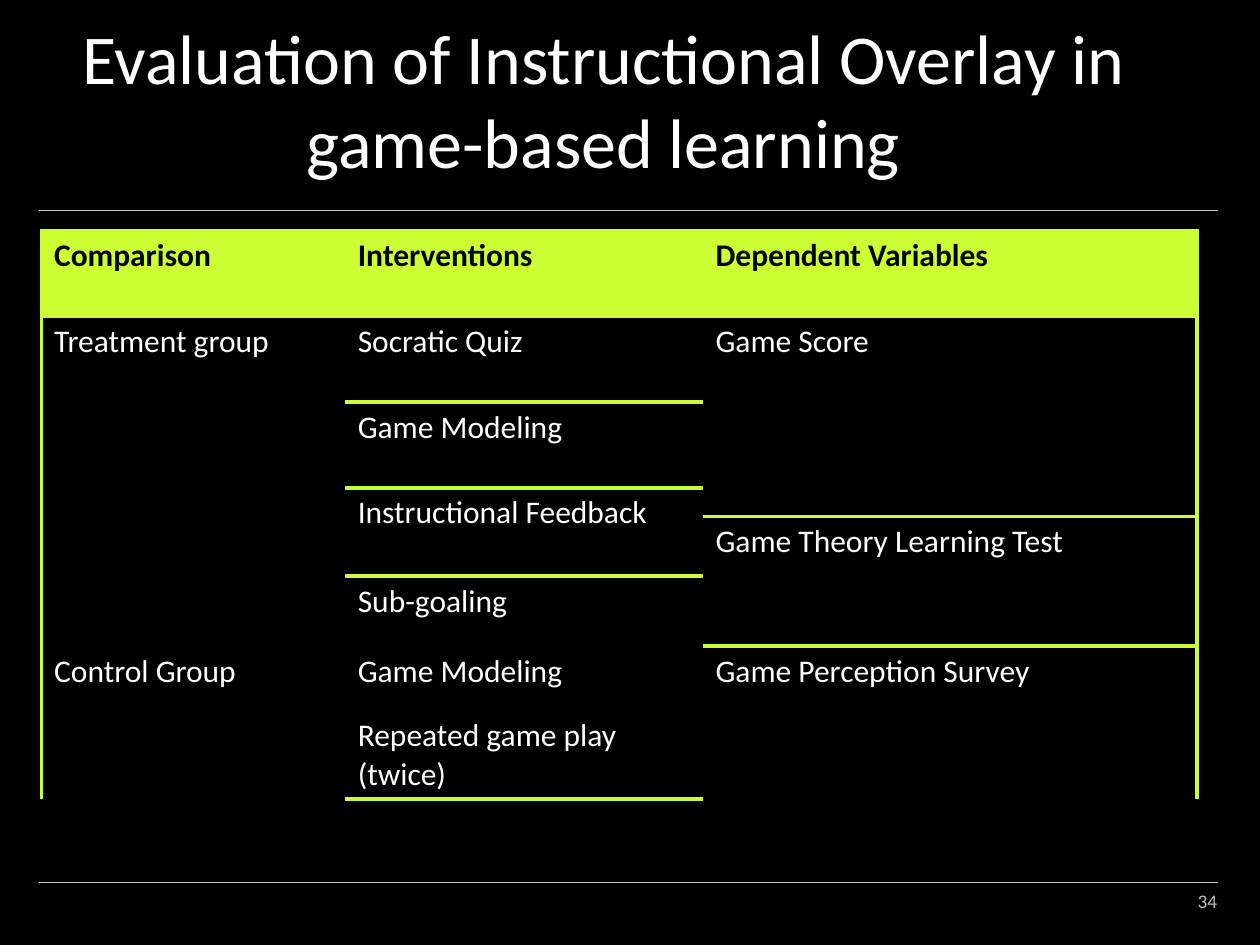
import pptx
import pptx.util
import pptx.dml.color
import pptx.enum.shapes
import pptx.enum.text
import pptx.oxml
import pptx.oxml.ns
from dataclasses import dataclass

Inches = pptx.util.Inches
Pt = pptx.util.Pt
ANCHOR = pptx.enum.text.MSO_ANCHOR
ALIGN = pptx.enum.text.PP_ALIGN
NO_GRID = "{2D5ABB26-0587-4C30-8999-92F81FD0307C}"


@dataclass(frozen=True)
class Theme:
    font: str = "Calibri"
    black: str = "000000"
    white: str = "FFFFFF"
    gray: str = "BFBFBF"
    lime: str = "CCFF33"
    title: int = 40
    body: int = 18
    small: int = 11
    thin: float = 0.25
    thick: float = 2.5


def rgb(color):
    return pptx.dml.color.RGBColor.from_string(color)


def write(frame, text, font, size, color, bold=False, align=ALIGN.LEFT):
    para = frame.paragraphs[0]
    para.alignment = align
    run = para.add_run()
    run.text = text
    run.font.name = font
    run.font.size = Pt(size)
    run.font.bold = bold
    run.font.color.rgb = rgb(color)


class Page:
    def __init__(self, deck, theme):
        self.theme = theme
        self.slide = deck.slides.add_slide(deck.slide_layouts[6])
        fill = self.slide.background.fill
        fill.solid()
        fill.fore_color.rgb = rgb(theme.black)

    def rule(self, left, top, width):
        line = self.slide.shapes.add_connector(
            pptx.enum.shapes.MSO_CONNECTOR.STRAIGHT,
            Inches(left), Inches(top), Inches(left + width), Inches(top))
        line.line.color.rgb = rgb(self.theme.gray)
        line.line.width = Pt(self.theme.thin)
        props = line._element.spPr
        props.append(pptx.oxml.parse_xml(
            f'<a:effectLst {pptx.oxml.ns.nsdecls("a")}/>'))

    def label(self, text, left, top, width, height, anchor, side=0.1, **style):
        box = self.slide.shapes.add_textbox(
            Inches(left), Inches(top), Inches(width), Inches(height))
        frame = box.text_frame
        frame.word_wrap = True
        frame.vertical_anchor = anchor
        frame.margin_left = frame.margin_right = Inches(side)
        write(frame, text, self.theme.font, **style)

    def edge(self, cell, side):
        cell._tc.get_or_add_tcPr().append(pptx.oxml.parse_xml(
            f'<a:ln{side} {pptx.oxml.ns.nsdecls("a")} '
            f'w="{Pt(self.theme.thick)}"><a:solidFill>'
            f'<a:srgbClr val="{self.theme.lime}"/></a:solidFill></a:ln{side}>'))

    def table(self, left, top, widths, heights, items, rules):
        theme = self.theme
        rows, cols = len(heights), len(widths)
        grid = self.slide.shapes.add_table(
            rows, cols, Inches(left), Inches(top),
            Inches(sum(widths)), Inches(sum(heights))).table
        grid._tbl.tblPr.find(pptx.oxml.ns.qn("a:tableStyleId")).text = NO_GRID
        grid.horz_banding = False
        for col, width in zip(grid.columns, widths):
            col.width = Inches(width)
        for row, height in zip(grid.rows, heights):
            row.height = Inches(height)

        for r in range(rows):
            for c in range(cols):
                cell = grid.cell(r, c)
                sides = {"L": c == 0, "R": c == cols - 1,
                         "T": r in rules[c], "B": r + 1 in rules[c]}
                for side, drawn in sides.items():
                    if drawn:
                        self.edge(cell, side)
                cell.fill.solid()
                cell.fill.fore_color.rgb = rgb(
                    theme.black if r else theme.lime)

        for c, column in enumerate(items):
            r = 0
            for text, span in column:
                cell = grid.cell(r, c)
                if span > 1:
                    cell.merge(grid.cell(r + span - 1, c))
                write(cell.text_frame, text, theme.font, theme.body,
                      theme.white if r else theme.black, bold=r == 0)
                r += span


def main():
    deck = pptx.Presentation()
    deck.slide_width, deck.slide_height = Inches(10), Inches(7.5)
    theme = Theme()
    page = Page(deck, theme)

    for top in (1.67, 7):
        page.rule(0.31, top, 9.36)
    page.label("34", 8.83, 6.95, 0.83, 0.4, ANCHOR.MIDDLE, side=0,
               size=theme.small, color=theme.gray, align=ALIGN.RIGHT)

    items = [
        [("Comparison", 1), ("Treatment group", 5), ("Control Group", 3)],
        [("Interventions", 1), ("Socratic Quiz", 1), ("Game Modeling", 1),
         ("Instructional Feedback", 2), ("Sub-goaling", 1),
         ("Game Modeling", 2), ("Repeated game play (twice)", 1)],
        [("Dependent Variables", 1), ("Game Score", 3),
         ("Game Theory Learning Test", 3), ("Game Perception Survey", 2)],
    ]
    rules = [(0, 1, 9), (0, 1, 2, 3, 5, 9), (0, 1, 4, 7, 9)]
    page.table(0.33, 1.83, [2.41, 2.84, 3.92],
               [0.68, 0.68, 0.68, 0.23, 0.47, 0.56, 0, 0.51, 0.7],
               items, rules)

    page.label("Evaluation of Instructional Overlay in game-based learning",
               0.5, 0.58, 8.58, 0.92, ANCHOR.BOTTOM,
               size=theme.title, color=theme.white, align=ALIGN.CENTER)
    deck.save("out.pptx")


if __name__ == "__main__":
    main()
